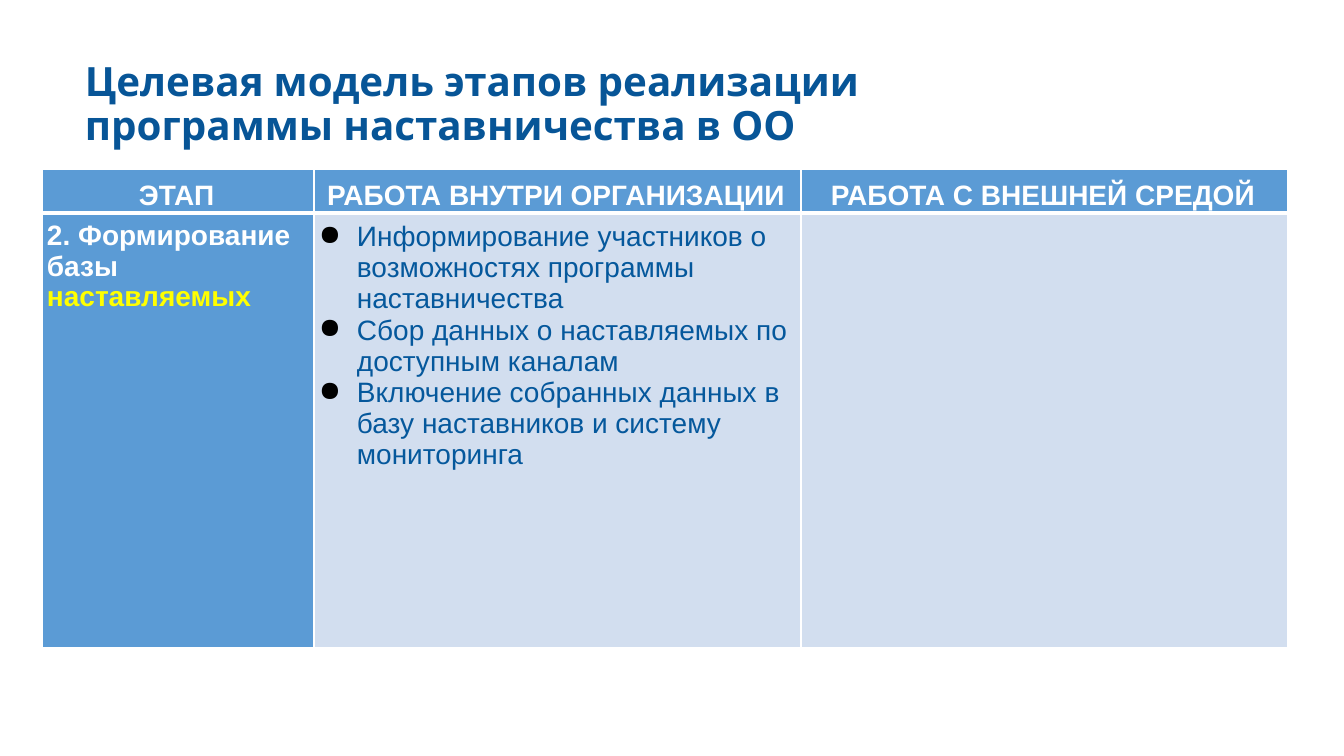
from lxml import etree
from pptx import Presentation
from pptx.dml.color import RGBColor
from pptx.enum.text import MSO_ANCHOR, PP_ALIGN
from pptx.oxml.ns import qn
from pptx.util import Emu, Pt

TOP, MIDDLE = MSO_ANCHOR.TOP, MSO_ANCHOR.MIDDLE
LEFT, CENTER = PP_ALIGN.LEFT, PP_ALIGN.CENTER

WHITE = RGBColor(0xFF, 0xFF, 0xFF)
BLACK = RGBColor(0x00, 0x00, 0x00)
YELLOW = RGBColor(0xFF, 0xFF, 0x00)
BLUE = RGBColor(0x5B, 0x9B, 0xD5)
PALE = RGBColor(0xD2, 0xDE, 0xEF)
NAVY = RGBColor(0x05, 0x58, 0x9C)
TITLE_BLUE = RGBColor(0x07, 0x55, 0x97)


def px(n):
    return Emu(round(n * 914400 / 100.8))


def add_run(p, text, size=20, font="Arial", color=WHITE, bold=True):
    r = p.add_run()
    r.text = text
    r.font.size, r.font.name, r.font.bold = Pt(size), font, bold
    r.font.color.rgb = color
    return r


class Slide:
    """Holds the current slide and the table style."""
    insets = (5, 8, 0, 0)
    indent = 38

    def __init__(self, prs):
        self.s = prs.slides.add_slide(prs.slide_layouts[6])

    def title(self, text, x, y, w, h):
        tf = self.s.shapes.add_textbox(px(x), px(y), px(w), px(h)).text_frame
        tf.word_wrap, tf.vertical_anchor = True, MIDDLE
        p = tf.paragraphs[0]
        p.line_spacing = 0.9
        add_run(p, text, size=28.8, font="Karla", color=TITLE_BLUE)

    def table(self, x, y, cols, rows):
        frame = self.s.shapes.add_table(len(rows), len(cols), px(x), px(y),
                                        px(sum(cols)), px(sum(rows)))
        table = frame.table
        table.first_row = table.horz_banding = False
        for column, w in zip(table.columns, cols):
            column.width = px(w)
        for row, h in zip(table.rows, rows):
            row.height = px(h)
        return table

    def cell(self, cell, fill, anchor=TOP, top=1, bottom=1):
        (cell.margin_left, cell.margin_top, cell.margin_right,
         cell.margin_bottom) = map(px, self.insets)
        cell.vertical_anchor = anchor
        for side, width in zip("LRTB", (1, 1, top, bottom)):
            ln = etree.SubElement(cell._tc.get_or_add_tcPr(),
                                  qn(f"a:ln{side}"), w=str(Pt(width)))
            solid = etree.SubElement(ln, qn("a:solidFill"))
            etree.SubElement(solid, qn("a:srgbClr"), val=str(WHITE))
        cell.fill.solid()
        cell.fill.fore_color.rgb = fill

    def paragraph(self, cell, runs, align=LEFT, spacing=None, bullet=False):
        tf = cell.text_frame
        p = tf.add_paragraph() if tf.text else tf.paragraphs[0]
        p.alignment, p.line_spacing = align, spacing
        if bullet:
            pPr = p._p.get_or_add_pPr()
            pPr.set("marL", str(px(self.indent)))
            pPr.set("indent", str(-px(self.indent)))
            color = etree.SubElement(pPr, qn("a:buClr"))
            etree.SubElement(color, qn("a:srgbClr"), val=str(BLACK))
            etree.SubElement(pPr, qn("a:buChar"), char="●")
        for text, style in runs:
            add_run(p, text, **style)


HEADERS = ("ЭТАП ", "РАБОТА ВНУТРИ ОРГАНИЗАЦИИ ", "РАБОТА С ВНЕШНЕЙ СРЕДОЙ ")
STAGE = [("2. Формирование базы ", {}), ("наставляемых", {"color": YELLOW})]
INTERNAL_WORK = (
    "Информирование участников о возможностях программы наставничества",
    "Сбор данных о наставляемых по доступным каналам",
    "Включение собранных данных в базу наставников и систему мониторинга",
)


def main():
    prs = Presentation()
    prs.slide_width, prs.slide_height = px(1344), px(756)
    slide = Slide(prs)

    # Title
    slide.title("Целевая модель этапов реализации программы наставничества в ОО",
                75, 58, 839, 95)

    # Table header
    table = slide.table(42, 169, (272, 487, 487), (44, 435))
    for i, header in enumerate(HEADERS):
        cell = table.cell(0, i)
        slide.cell(cell, BLUE, anchor=MIDDLE, bottom=3)
        slide.paragraph(cell, [(header, {})], align=CENTER, spacing=1.07)

    # Stage and its work
    for i, fill in enumerate((BLUE, PALE, PALE)):
        slide.cell(table.cell(1, i), fill, top=3)
    slide.paragraph(table.cell(1, 0), STAGE, spacing=0.98)
    for task in INTERNAL_WORK:
        slide.paragraph(table.cell(1, 1),
                        [(task, {"color": NAVY, "bold": False})], bullet=True)

    prs.save("out.pptx")


if __name__ == "__main__":
    main()
